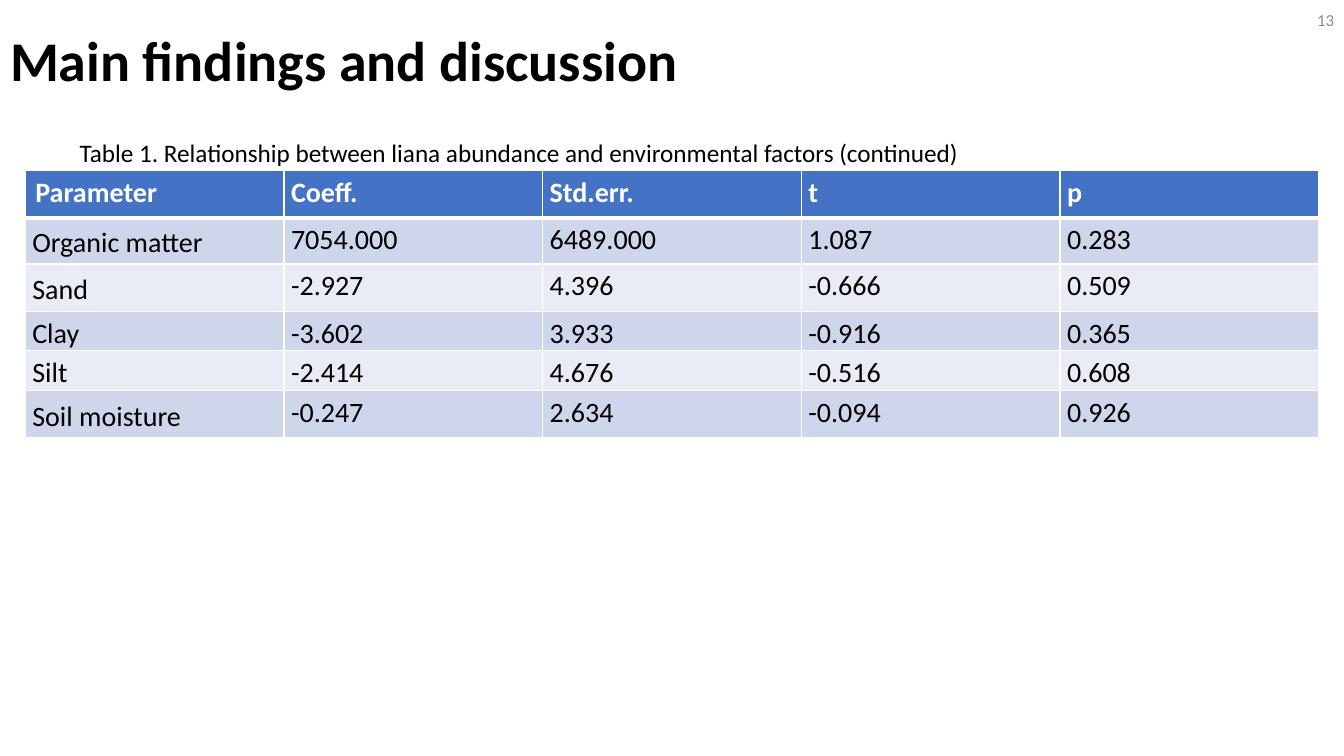
from lxml.etree import SubElement
from pptx import Presentation
from pptx.dml.color import RGBColor
from pptx.enum.text import MSO_ANCHOR, PP_ALIGN
from pptx.oxml.ns import qn
from pptx.util import Inches, Pt

HEADS = ["Parameter", "Coeff.", "Std.err.", "t", "p"]
FACTORS = [
    ["Organic matter", "7054.000", "6489.000", "1.087", "0.283"],
    ["Sand", "-2.927", "4.396", "-0.666", "0.509"],
    ["Clay", "-3.602", "3.933", "-0.916", "0.365"],
    ["Silt", "-2.414", "4.676", "-0.516", "0.608"],
    ["Soil moisture", "-0.247", "2.634", "-0.094", "0.926"],
]
HEIGHTS = [6.27, 6.13, 6.27, 5.07, 4.27, 6.27]


def paint(target, color):
    """Set a font's colour or a solid fill from a hex string."""
    if hasattr(target, "solid"):
        target.solid()
        target = target.fore_color
    else:
        target = target.color
    target.rgb = RGBColor.from_string(color)


def write(frame, text, size, color="000000", bold=False, align=PP_ALIGN.LEFT,
          line=1.0, after=0, face="Calibri"):
    para = frame.paragraphs[0]
    para.alignment, para.line_spacing = align, line
    para.space_after = Pt(after)
    run = para.add_run()
    run.text = text
    font = run.font
    font.name, font.size, font.bold = face, Pt(size), bold
    paint(font, color)


def rule(cell, side, width, color="FFFFFF"):
    """Draw one border of a cell; call in the order L, R, T, B."""
    edge = SubElement(cell._tc.get_or_add_tcPr(), qn("a:ln" + side), w=str(Pt(width)))
    fill = SubElement(edge, qn("a:solidFill"))
    SubElement(fill, qn("a:srgbClr"), val=color)


class Page:
    """A slide whose lengths are percentages of its width and height."""
    head, bands = "4472C4", ("CFD5EA", "E9EBF5")

    def __init__(self, deck):
        self.wide, self.high = deck.slide_width, deck.slide_height
        self.slide = deck.slides.add_slide(deck.slide_layouts[5])

    def box(self, left, top, width, height):
        return (int(self.wide * left / 100), int(self.high * top / 100),
                int(self.wide * width / 100), int(self.high * height / 100))

    def title(self, text, *area):
        shape = self.slide.shapes.title
        shape.left, shape.top, shape.width, shape.height = self.box(*area)
        shape.text_frame.vertical_anchor = MSO_ANCHOR.MIDDLE
        write(shape.text_frame, text, 40, bold=True, line=0.9)

    def label(self, text, *area, wrap=True, anchor=MSO_ANCHOR.TOP, **style):
        frame = self.slide.shapes.add_textbox(*self.box(*area)).text_frame
        frame.word_wrap, frame.vertical_anchor = wrap, anchor
        write(frame, text, **style)

    def table(self, rows, heights, left, top, width):
        area = self.box(left, top, width, sum(heights))
        grid = self.slide.shapes.add_table(len(rows), len(rows[0]), *area).table
        for column in grid.columns:
            column.width = area[2] // len(rows[0])
        for r, row in enumerate(rows):
            grid.rows[r].height = int(self.high * heights[r] / 100)
            for c, text in enumerate(row):
                self.cell(grid.cell(r, c), text, r, c)

    def cell(self, cell, text, r, c):
        for side in "LRTB":
            thick = (r == 0 and side == "B") or (r == 1 and side == "T")
            rule(cell, side, 3 if thick else 1)
        paint(cell.fill, self.bands[(r - 1) % 2] if r else self.head)
        style = {"color": "000000" if r else "FFFFFF", "bold": r == 0}
        if r or c:
            cell.margin_left = cell.margin_right = Inches(0.07)
            cell.margin_top = cell.margin_bottom = 0
            style.update(line=1.15, after=10)
        if r and c == 0:
            cell.vertical_anchor = MSO_ANCHOR.MIDDLE
        write(cell.text_frame, text, 20, **style)


def main():
    deck = Presentation()
    deck.slide_width, deck.slide_height = Inches(13.33), Inches(7.5)
    page = Page(deck)
    page.title("Main findings and discussion", 0, -1.33, 100, 19.33)
    page.table([HEADS] + FACTORS, HEIGHTS, 1.88, 22.53, 96.25)
    page.label("13", 77.5, 0, 22.5, 5.33, anchor=MSO_ANCHOR.MIDDLE,
               size=12, color="8C8C8C", align=PP_ALIGN.RIGHT)
    page.label("Table 1. Relationship between liana abundance and "
               "environmental factors (continued)",
               5.18, 17.47, 67.14, 5.33, wrap=False, size=18)
    deck.save("out.pptx")


if __name__ == "__main__":
    main()
